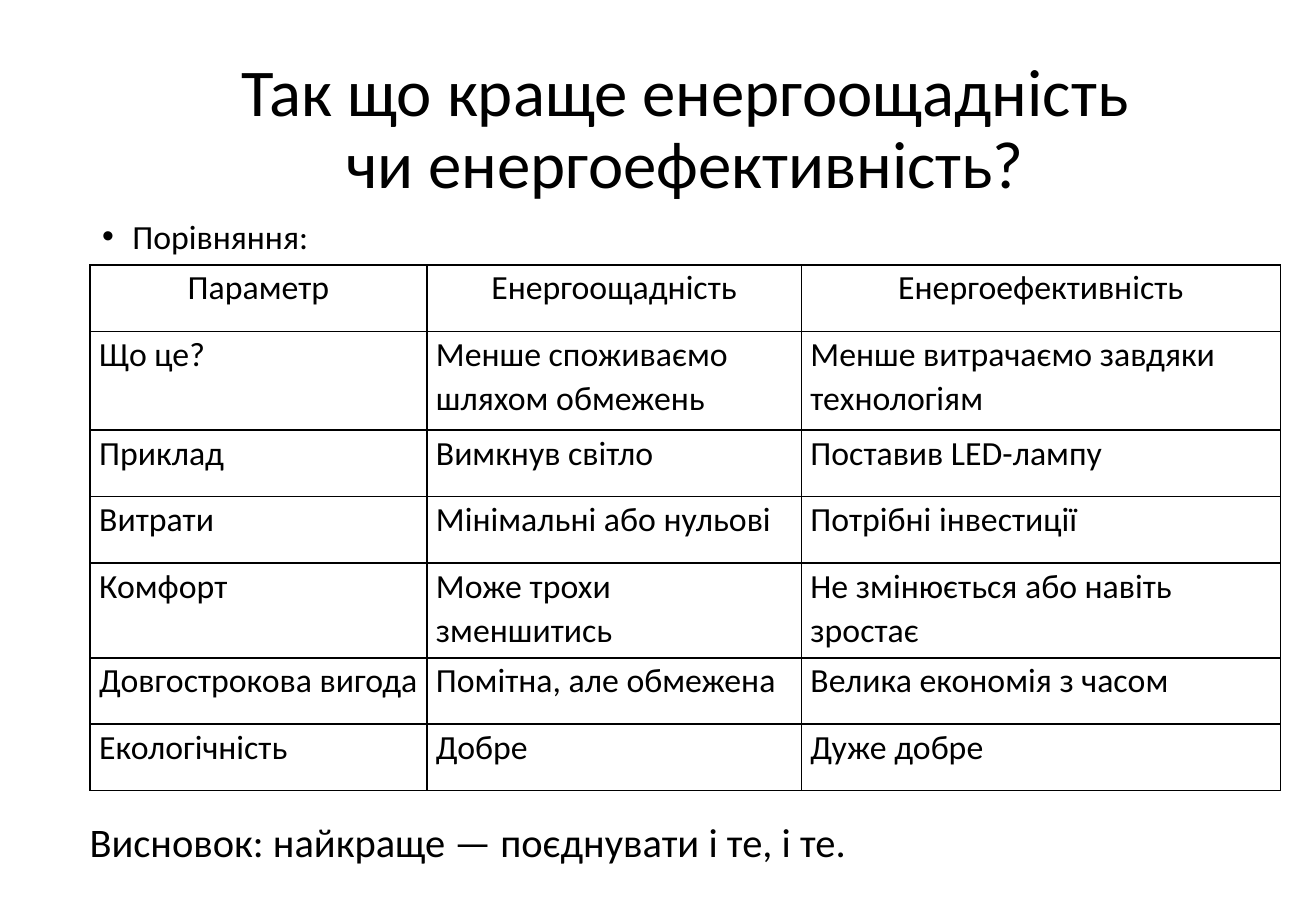
from lxml import etree
from pptx import Presentation
from pptx.dml.color import RGBColor
from pptx.enum.text import MSO_ANCHOR, PP_ALIGN
from pptx.oxml.ns import qn
from pptx.util import Pt

BLACK = RGBColor(0, 0, 0)
FONT = "Calibri"
LEFT, CENTER = PP_ALIGN.LEFT, PP_ALIGN.CENTER
TOP, MIDDLE = MSO_ANCHOR.TOP, MSO_ANCHOR.MIDDLE

COLUMN_WIDTHS = [199.6, 222, 284]
ROW_HEIGHTS = [39.4, 58.6, 39.4, 39.4, 56.2, 39.4, 39.4]
COMPARISON = [
    ["Параметр", "Енергоощадність", "Енергоефективність"],
    ["Що це?", "Менше споживаємо шляхом обмежень", "Менше витрачаємо завдяки технологіям"],
    ["Приклад", "Вимкнув світло", "Поставив LED-лампу"],
    ["Витрати", "Мінімальні або нульові", "Потрібні інвестиції"],
    ["Комфорт", "Може трохи зменшитись", "Не змінюється або навіть зростає"],
    ["Довгострокова вигода", "Помітна, але обмежена", "Велика економія з часом"],
    ["Екологічність", "Добре", "Дуже добре"],
]


def set_values(target, values):
    for name, value in values.items():
        setattr(target, name, value)


def write_text(frame, text, size, **paragraph_format):
    para = frame.paragraphs[0]
    para.text = text
    set_values(para, paragraph_format)
    for span in para.runs:
        set_values(span.font, {"name": FONT, "size": Pt(size), "bold": False})
        span.font.color.rgb = BLACK
    return para


def add_text(page, box, text, size, anchor=TOP, **paragraph_format):
    frame = page.shapes.add_textbox(*map(Pt, box)).text_frame
    set_values(frame, {"word_wrap": True, "vertical_anchor": anchor})
    return write_text(frame, text, size, **paragraph_format)


def add_bullet(para, indent):
    properties = para._p.get_or_add_pPr()
    properties.set("marL", str(Pt(indent)))
    properties.set("indent", str(Pt(-indent)))
    etree.SubElement(properties, qn("a:buFont"), typeface="Arial")
    etree.SubElement(properties, qn("a:buChar"), char="•")


def add_borders(cell):
    properties = cell._tc.get_or_add_tcPr()
    for side in ("lnL", "lnR", "lnT", "lnB"):
        line = etree.SubElement(properties, qn(f"a:{side}"), w=str(Pt(1)))
        fill = etree.SubElement(line, qn("a:solidFill"))
        etree.SubElement(fill, qn("a:srgbClr"), val=str(BLACK))


def add_heading(page, box):
    left, top, width, height = box
    title_height = 98
    # Title
    add_text(page, (left, top, width, title_height),
             "Так що краще енергоощадність\vчи енергоефективність?", 39.6,
             anchor=MIDDLE, alignment=CENTER, line_spacing=0.9)
    # Bulleted lead-in
    lead = add_text(page, (left, top + title_height, width, height - title_height),
                    "Порівняння:", 20, line_spacing=0.9, space_before=Pt(10))
    add_bullet(lead, 18)


def add_comparison(page, box):
    table = page.shapes.add_table(len(ROW_HEIGHTS), len(COLUMN_WIDTHS), *map(Pt, box)).table
    set_values(table, {"first_row": False, "horz_banding": False})
    for column, width in zip(table.columns, COLUMN_WIDTHS):
        column.width = Pt(width)
    for row_number, (row, height, texts) in enumerate(zip(table.rows, ROW_HEIGHTS, COMPARISON)):
        row.height = Pt(height)
        for cell, text in zip(row.cells, texts):
            set_values(cell, {"margin_left": Pt(5.4), "margin_right": Pt(5.4),
                              "margin_top": 0, "margin_bottom": 0})
            add_borders(cell)
            cell.fill.background()
            write_text(cell.text_frame, text, 20, line_spacing=1.07, space_after=Pt(8),
                       alignment=LEFT if row_number else CENTER)


def add_conclusion(page, box):
    add_text(page, box, "Висновок: найкраще — поєднувати і те, і те.", 24)


def main():
    deck = Presentation()
    set_values(deck, {"slide_width": Pt(780), "slide_height": Pt(540)})
    page = deck.slides.add_slide(deck.slide_layouts[6])
    add_heading(page, (53.4, 28.8, 705.6, 128.2))
    add_comparison(page, (53.4, 157, sum(COLUMN_WIDTHS), sum(ROW_HEIGHTS)))
    add_conclusion(page, (46, 481, 615, 36))
    deck.save("out.pptx")


if __name__ == "__main__":
    main()
